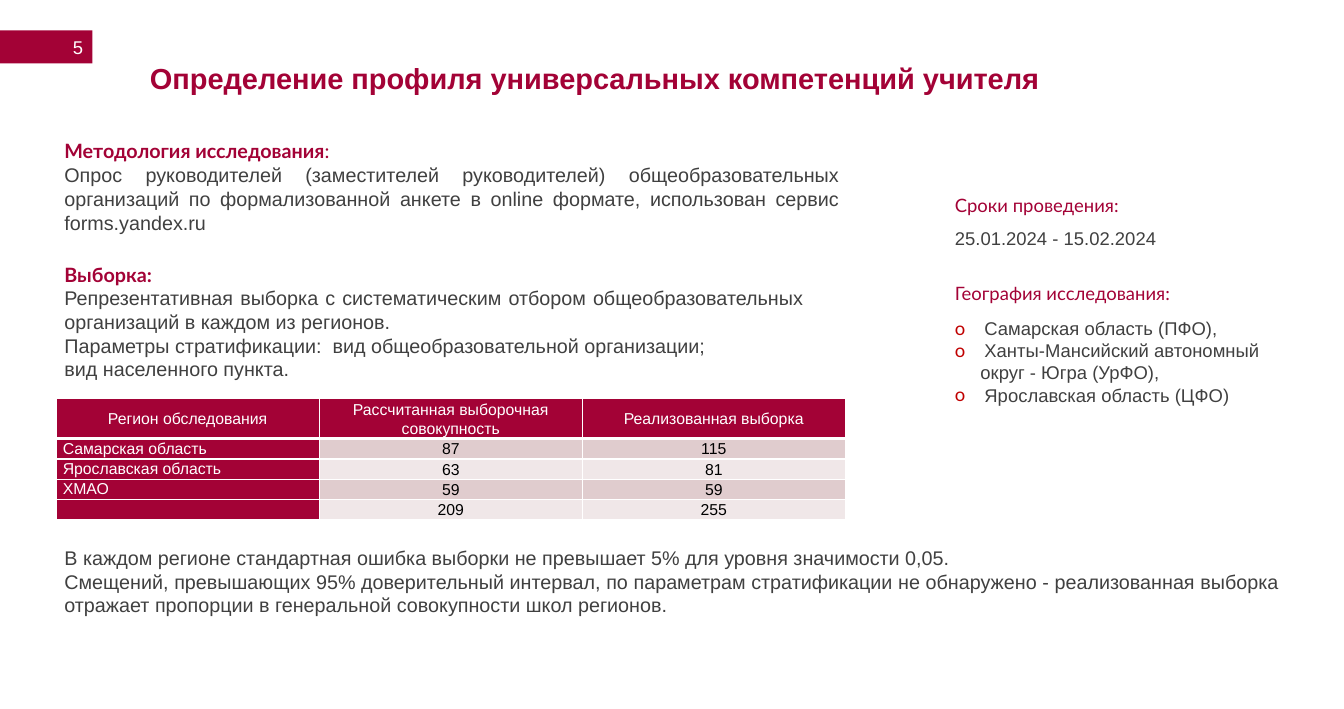
from dataclasses import dataclass

from pptx import Presentation
from pptx.dml.color import RGBColor
from pptx.enum import shapes, text
from pptx.oxml import ns, xmlchemy
from pptx.util import Pt


@dataclass(frozen=True)
class Theme:
    accent: str = "A30236"
    body: str = "404040"
    white: str = "FFFFFF"
    black: str = "000000"
    bullet: str = "C00000"
    band_dark: str = "E0CCCE"
    band_light: str = "F0E7E8"
    body_font: str = "Arial"
    heading_font: str = "Lato"
    title_size: float = 22
    text_size: float = 15
    side_size: float = 14
    table_size: float = 12


THEME = Theme()
LEFT, JUSTIFY = text.PP_ALIGN.LEFT, text.PP_ALIGN.JUSTIFY
CENTER, RIGHT = text.PP_ALIGN.CENTER, text.PP_ALIGN.RIGHT


@dataclass(frozen=True)
class Line:
    words: str
    heading: bool = False
    bold: bool = False
    tail: str = ""  # regular-weight ending of a bold heading
    align: text.PP_ALIGN = LEFT
    before: float = 0
    indent: float = 0
    bullet: bool = False


@dataclass(frozen=True)
class Block:
    left: float
    top: float
    width: float
    height: float
    size: float
    lines: tuple[Line, ...]


BLOCKS = (
    Block(41.8, 102.2, 602.6, 79.9, THEME.text_size, (
        Line("Методология исследования", heading=True, bold=True, tail=":"),
        Line("Опрос руководителей (заместителей руководителей) общеобразовательных "
             "организаций по формализованной анкете в online формате, "
             "использован сервис forms.yandex.ru", align=JUSTIFY),
    )),
    Block(41.8, 195.8, 575.3, 101.5, THEME.text_size, (
        Line("Выборка:", heading=True, bold=True),
        Line("Репрезентативная выборка с систематическим отбором "
             "общеобразовательных организаций в каждом из регионов.", align=JUSTIFY),
        Line("Параметры стратификации:  вид общеобразовательной организации;",
             align=JUSTIFY),
        Line("вид населенного пункта.", align=JUSTIFY),
    )),
    Block(41.8, 411.1, 936.7, 61.9, THEME.text_size, (
        Line("В каждом регионе стандартная ошибка выборки не превышает 5% "
             "для уровня значимости 0,05.", align=JUSTIFY),
        Line("Смещений, превышающих 95% доверительный интервал, по параметрам "
             "стратификации не обнаружено - реализованная выборка отражает "
             "пропорции в генеральной совокупности школ регионов.", align=JUSTIFY),
    )),
    Block(717.8, 144, 196.6, 49.7, THEME.side_size, (
        Line("Сроки проведения:", heading=True),
        Line("25.01.2024 - 15.02.2024", before=8),
    )),
    Block(717.8, 211, 260.6, 102.2, THEME.side_size, (
        Line("География исследования:", heading=True),
        Line("Самарская область (ПФО),", before=9.6, indent=22.4, bullet=True),
        Line("Ханты-Мансийский автономный", indent=22.4, bullet=True),
        Line("округ - Югра (УрФО),", indent=19.4),
        Line("Ярославская область (ЦФО)", indent=22.4, bullet=True),
    )),
)

SAMPLE = (
    ("Регион обследования", "Рассчитанная выборочная совокупность", "Реализованная выборка"),
    ("Самарская область", "87", "115"),
    ("Ярославская область", "63", "81"),
    ("ХМАО", "59", "59"),
    ("", "209", "255"),
)
COLUMN_WIDTH, HEADER_HEIGHT, ROW_HEIGHT = 199.7, 30.4, 15.4


def add_element(parent, tag: str, **attributes: str):
    element = xmlchemy.OxmlElement(tag)
    for name, value in attributes.items():
        element.set(name, value)
    parent.append(element)
    return element


def set_font(font, name: str, size: float, color: str, bold: bool = False) -> None:
    font.name, font.size, font.bold = name, Pt(size), bold
    font.color.rgb = RGBColor.from_string(color)


def write_line(paragraph, line: Line, size: float) -> None:
    properties = paragraph._p.get_or_add_pPr()
    if line.indent:
        properties.set("marL", str(Pt(line.indent)))
        properties.set("indent", str(-Pt(line.indent) if line.bullet else 0))
    if line.bullet:
        color = add_element(properties, "a:buClr")
        add_element(color, "a:srgbClr", val=THEME.bullet)
        add_element(properties, "a:buFont", typeface=THEME.heading_font)
        add_element(properties, "a:buChar", char="o")
    paragraph.alignment = line.align
    if line.before:
        paragraph.space_before = Pt(line.before)
    set_font(paragraph.font,
             THEME.heading_font if line.heading else THEME.body_font, size,
             THEME.accent if line.heading else THEME.body, line.bold)
    paragraph.add_run().text = line.words
    if line.tail:
        tail = paragraph.add_run()
        tail.text, tail.font.bold = line.tail, False


def add_block(slide, block: Block) -> None:
    box = slide.shapes.add_textbox(Pt(block.left), Pt(block.top),
                                   Pt(block.width), Pt(block.height))
    frame = box.text_frame
    frame.word_wrap = True
    for index, line in enumerate(block.lines):
        paragraph = frame.add_paragraph() if index else frame.paragraphs[0]
        write_line(paragraph, line, block.size)


def set_borders(cell, bottom: float) -> None:
    properties = cell._tc.get_or_add_tcPr()
    for side, width in (("L", 1), ("R", 1), ("T", 1), ("B", bottom)):
        border = add_element(properties, f"a:ln{side}", w=str(Pt(width)))
        fill = add_element(border, "a:solidFill")
        add_element(fill, "a:srgbClr", val=THEME.white)


def fill_cell(cell, words: str, row: int, column: int) -> None:
    is_label = row == 0 or column == 0
    set_borders(cell, 3 if row == 0 else 1)
    band = THEME.band_dark if row % 2 else THEME.band_light
    cell.fill.solid()
    cell.fill.fore_color.rgb = RGBColor.from_string(THEME.accent if is_label else band)
    cell.margin_left = cell.margin_right = Pt(5)
    cell.margin_top = cell.margin_bottom = Pt(0)
    is_region = row > 0 and column == 0
    cell.vertical_anchor = text.MSO_ANCHOR.TOP if is_region else text.MSO_ANCHOR.MIDDLE
    paragraph = cell.text_frame.paragraphs[0]
    paragraph.alignment = LEFT if is_region else CENTER
    paragraph.line_spacing = 1.07
    set_font(paragraph.font, THEME.body_font, THEME.table_size,
             THEME.white if is_label else THEME.black)
    if words:
        paragraph.add_run().text = words
    else:
        add_element(paragraph._p, "a:endParaRPr", sz=str(int(THEME.table_size * 100)))


def add_sample_table(slide) -> None:
    rows, columns = len(SAMPLE), len(SAMPLE[0])
    height = HEADER_HEIGHT + ROW_HEIGHT * (rows - 1)
    table = slide.shapes.add_table(rows, columns, Pt(42.7), Pt(302.4),
                                   Pt(COLUMN_WIDTH * columns), Pt(height)).table
    for row, values in enumerate(SAMPLE):
        table.rows[row].height = Pt(ROW_HEIGHT if row else HEADER_HEIGHT)
        for column, words in enumerate(values):
            fill_cell(table.cell(row, column), words, row, column)


def add_page_tag(slide, number: str) -> None:
    tag = slide.shapes.add_shape(shapes.MSO_SHAPE.RECTANGLE, Pt(0), Pt(23), Pt(70.2), Pt(25.2))
    tag.shadow.inherit = False
    tag.fill.solid()
    tag.fill.fore_color.rgb = RGBColor.from_string(THEME.accent)
    tag.line.fill.background()
    tag.text_frame.vertical_anchor = text.MSO_ANCHOR.MIDDLE
    paragraph = tag.text_frame.paragraphs[0]
    paragraph.alignment = RIGHT
    set_font(paragraph.font, THEME.body_font, THEME.side_size, THEME.white)
    paragraph.add_run().text = number


def format_title(title, words: str) -> None:
    title.left, title.top, title.width, title.height = Pt(113.8), Pt(49), Pt(687.6), Pt(28.8)
    frame = title.text_frame
    frame.margin_left = frame.margin_right = frame.margin_top = frame.margin_bottom = Pt(0)
    frame.vertical_anchor = text.MSO_ANCHOR.TOP
    frame.auto_size = text.MSO_AUTO_SIZE.NONE
    paragraph = frame.paragraphs[0]
    paragraph.alignment, paragraph.line_spacing = LEFT, 0.9
    set_font(paragraph.font, THEME.body_font, THEME.title_size, THEME.accent, bold=True)
    paragraph.add_run().text = words


def main() -> None:
    presentation = Presentation()
    presentation.slide_width, presentation.slide_height = Pt(1020.24), Pt(538.56)
    slide = presentation.slides.add_slide(presentation.slide_layouts[5])
    # Header
    add_page_tag(slide, "5")
    format_title(slide.shapes.title, "Определение профиля универсальных компетенций учителя")
    # Body text and sample table
    for block in BLOCKS:
        add_block(slide, block)
    add_sample_table(slide)
    presentation.save("out.pptx")


if __name__ == "__main__":
    main()
